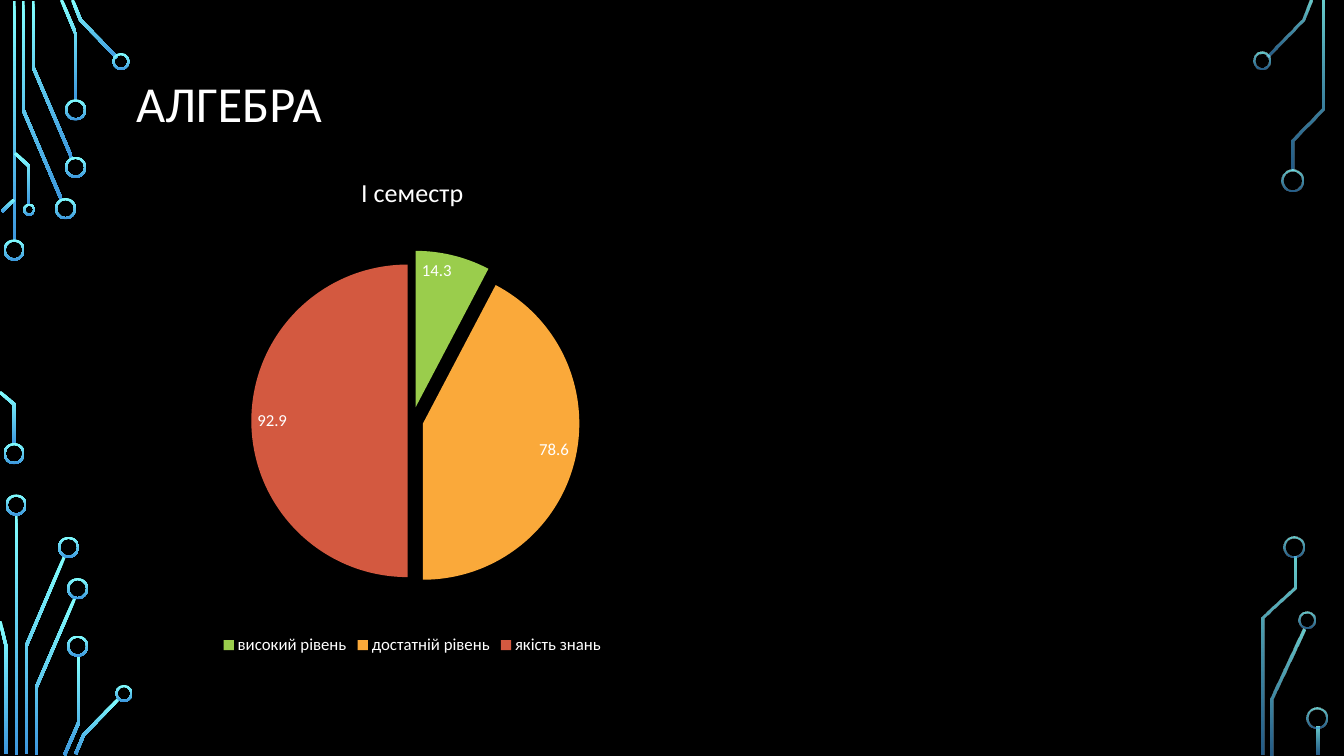
import math

import pptx
import pptx.chart.data
import pptx.dml.color
import pptx.enum.chart
import pptx.enum.shapes
import pptx.enum.text
import pptx.oxml.ns
import pptx.oxml.xmlchemy
import pptx.util

RGBColor = pptx.dml.color.RGBColor
BLACK = RGBColor(0x00, 0x00, 0x00)
WHITE = RGBColor(0xFF, 0xFF, 0xFF)
CYAN = RGBColor(0x82, 0xFF, 0xFF)
BLUE = RGBColor(0x3D, 0x97, 0xDE)
GREEN = RGBColor(0x9A, 0xCD, 0x4C)
ORANGE = RGBColor(0xFA, 0xA9, 0x3A)
RED = RGBColor(0xD3, 0x59, 0x40)

SOLID = (100, 100)
FADED = (80, 60)
TRACE_WIDTH = 0.03
RING_WIDTH = 0.02

LEFT_TRACES = [
    [(0.14, 0.01), (0.14, 2.4)],
    [(0.23, 0.01), (0.23, 1.09), (0.61, 1.98)],
    [(0.33, 0.01), (0.33, 0.67), (0.71, 1.56)],
    [(0.61, 0), (0.75, 0.33), (0.75, 1)],
    [(0.72, 0), (0.8, 0.2), (1.16, 0.57)],
    [(0.02, 2.1), (0.14, 1.98)],
    [(0, 3.89), (0.14, 4.01), (0.14, 4.41)],
    [(0.15, 1.52), (0.29, 1.65), (0.29, 2.03)],
    [(0.16, 5.1), (0.16, 7.49)],
    [(0.26, 7.48), (0.26, 6.41), (0.64, 5.52)],
    [(0.06, 7.48), (0.06, 6.41), (0, 6.16)],
    [(0.36, 7.49), (0.36, 6.82), (0.74, 5.94)],
    [(0.64, 7.49), (0.78, 7.17), (0.78, 6.5)],
    [(0.75, 7.48), (0.83, 7.29), (1.18, 6.93)],
]
LEFT_RINGS = [
    (0.14, 2.48, 0.21), (0.14, 4.5, 0.21), (0.65, 2.07, 0.21),
    (0.75, 1.66, 0.21), (0.75, 1.09, 0.21), (1.2, 0.61, 0.17),
    (0.29, 2.08, 0.12), (0.16, 5.01, 0.21), (0.68, 5.43, 0.21),
    (0.77, 5.84, 0.21), (0.77, 6.41, 0.21), (1.23, 6.88, 0.17),
]
RIGHT_TRACES = [
    [(12.57, 0.56), (12.92, 0.2), (13, 0)],
    [(12.62, 7.49), (12.62, 6.93), (12.93, 6.24)],
    [(12.82, 1.69), (12.82, 1.39), (13.12, 1.08), (13.12, 0.01)],
    [(12.53, 7.49), (12.53, 6.13), (12.84, 5.83), (12.84, 5.52)],
    [(13.07, 7.21), (13.07, 7.49)],
]
RIGHT_RINGS = [
    (12.52, 0.6, 0.17), (12.82, 1.79, 0.21), (12.96, 6.15, 0.17),
    (12.83, 5.43, 0.21), (13.06, 7.12, 0.21),
]
SLICES = [
    ("високий рівень", 14.3, GREEN, 9),
    ("достатній рівень", 78.6, ORANGE, 7),
    ("якість знань", 92.9, RED, 3),
]


def length(inches):
    return pptx.util.Cm(inches * 2.54)


def band(points, width):
    normals = []
    for (x1, y1), (x2, y2) in zip(points, points[1:]):
        size = math.hypot(x2 - x1, y2 - y1)
        normals.append(((y1 - y2) / size, (x2 - x1) / size))
    sides = [], []
    for (x, y), (ax, ay), (bx, by) in zip(points, normals[:1] + normals, normals + normals[-1:]):
        reach = width / 2 / (1 + ax * bx + ay * by)
        for side, sign in zip(sides, (1, -1)):
            side.append((length(x + sign * reach * (ax + bx)), length(y + sign * reach * (ay + by))))
    return sides[0] + sides[1][::-1]


def value_element(tag, value):
    element = pptx.oxml.xmlchemy.OxmlElement(tag)
    element.set("val", str(value))
    return element


class SlideBuilder:
    font_name = "Calibri"

    def __init__(self, presentation):
        self.slide = presentation.slides.add_slide(presentation.slide_layouts[5])
        self.slide.background.fill.solid()
        self.slide.background.fill.fore_color.rgb = BLACK

    def style_font(self, font, size):
        for name, value in {"name": self.font_name, "size": pptx.util.Pt(size), "bold": False}.items():
            setattr(font, name, value)
        font.color.rgb = WHITE

    def title(self, text, left, top, width, height):
        shape = self.slide.shapes.title
        box = {"left": left, "top": top, "width": width, "height": height}
        for name, value in box.items():
            setattr(shape, name, length(value))
        frame = shape.text_frame
        frame.text = text
        frame.word_wrap = True
        frame.auto_size = pptx.enum.text.MSO_AUTO_SIZE.NONE
        frame.vertical_anchor = pptx.enum.text.MSO_ANCHOR.MIDDLE
        paragraph = frame.paragraphs[0]
        paragraph.alignment = pptx.enum.text.PP_ALIGN.LEFT
        paragraph.line_spacing = 0.9
        self.style_font(paragraph.runs[0].font, 36)

    def glow(self, shape, opacities):
        shape.shadow.inherit = False
        shape.line.fill.background()
        shape.fill.gradient()
        shape.fill.gradient_angle = 270
        for stop, color, position in zip(shape.fill.gradient_stops, (CYAN, BLUE), (0, 1)):
            stop.color.rgb = color
            stop.position = position
        for color, opacity in zip(shape._element.iter(pptx.oxml.ns.qn("a:srgbClr")), opacities):
            if opacity < 100:
                color.append(value_element("a:alpha", opacity * 1000))

    def trace(self, points, opacities):
        start, *others = band(points, TRACE_WIDTH)
        builder = self.slide.shapes.build_freeform(*start)
        builder.add_line_segments(others, close=True)
        self.glow(builder.convert_to_shape(), opacities)

    def ring(self, x, y, diameter, opacities):
        shape = self.slide.shapes.add_shape(
            pptx.enum.shapes.MSO_SHAPE.DONUT, length(x - diameter / 2), length(y - diameter / 2),
            length(diameter), length(diameter))
        shape.adjustments[0] = RING_WIDTH / diameter
        self.glow(shape, opacities)

    def pie(self, title, slices, left, top, width, height):
        data = pptx.chart.data.CategoryChartData()
        data.categories = [label for label, *_ in slices]
        data.add_series(title, [value for _, value, *_ in slices])
        chart = self.slide.shapes.add_chart(
            pptx.enum.chart.XL_CHART_TYPE.PIE, length(left), length(top),
            length(width), length(height), data).chart
        self.style_font(chart.font, 10)
        chart.has_title = True
        chart.chart_title.text_frame.text = title
        self.style_font(chart.chart_title.text_frame.paragraphs[0].runs[0].font, 18.6)
        chart.has_legend = True
        chart.legend.position = pptx.enum.chart.XL_LEGEND_POSITION.BOTTOM
        chart.legend.include_in_layout = False
        self.style_font(chart.legend.font, 12)
        plot = chart.plots[0]
        plot.vary_by_categories = True
        series = plot.series[0]
        for index, (_, _, color, _) in enumerate(slices):
            point_format = series.points[index].format
            point_format.fill.solid()
            point_format.fill.fore_color.rgb = color
            point_format.line.fill.background()
        slice_elements = series._element.findall(pptx.oxml.ns.qn("c:dPt"))
        slice_elements[0].addprevious(value_element("c:explosion", 21))
        for element, (*_, offset) in zip(slice_elements, slices):
            properties = element.find(pptx.oxml.ns.qn("c:spPr"))
            properties.addprevious(value_element("c:explosion", offset))
        labels = series.data_labels
        settings = {"show_value": True, "show_percentage": False,
                    "position": pptx.enum.chart.XL_LABEL_POSITION.INSIDE_END}
        for name, value in settings.items():
            setattr(labels, name, value)
        self.style_font(labels.font, 12)


def main():
    presentation = pptx.Presentation()
    presentation.slide_width = length(13.33)
    presentation.slide_height = length(7.5)
    builder = SlideBuilder(presentation)
    for traces, rings, opacities in ((LEFT_TRACES, LEFT_RINGS, SOLID), (RIGHT_TRACES, RIGHT_RINGS, FADED)):
        for points in traces:
            builder.trace(points, opacities)
        for x, y, diameter in rings:
            builder.ring(x, y, diameter, opacities)
    builder.title("АЛГЕБРА", 1.25, 0.24, 10.83, 1.62)
    builder.pie("І семестр", SLICES, 0.52, 1.53, 7.14, 5.01)
    presentation.save("out.pptx")


if __name__ == "__main__":
    main()
